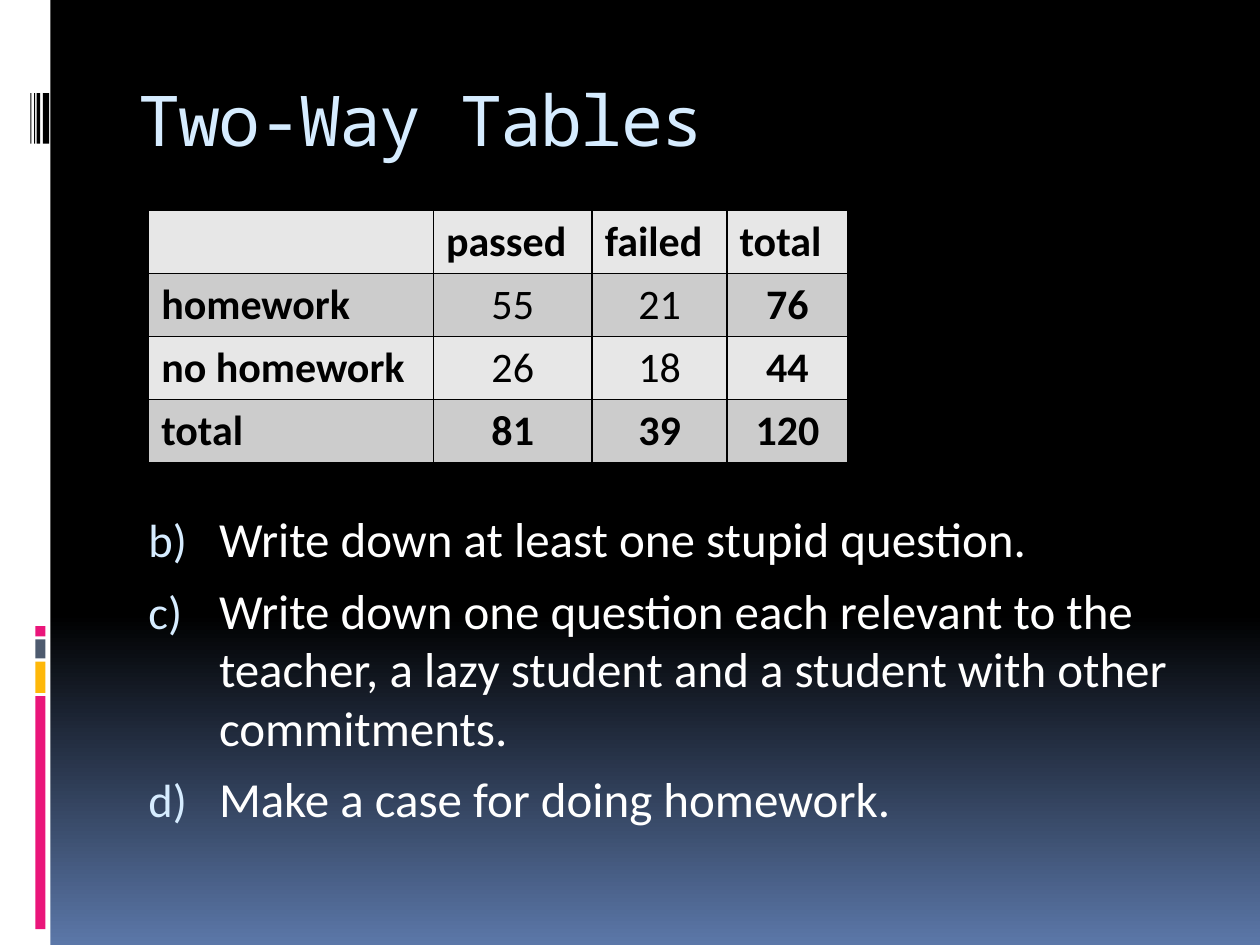
import pptx
import pptx.dml.color
import pptx.enum.shapes
import pptx.enum.text
import pptx.oxml
import pptx.oxml.ns
import pptx.util
import copy

RGBColor = pptx.dml.color.RGBColor
BLACK = RGBColor(0x00, 0x00, 0x00)
WHITE = RGBColor(0xFF, 0xFF, 0xFF)
BLUE = RGBColor(0x5B, 0x77, 0xA8)
PALE_BLUE = RGBColor(0xD6, 0xEC, 0xFF)
PINK = RGBColor(0xEA, 0x15, 0x7A)
YELLOW = RGBColor(0xFE, 0xB8, 0x0A)
SLATE = RGBColor(0x4E, 0x5B, 0x6F)
LIGHT_GREY = RGBColor(0xE7, 0xE7, 0xE7)
GREY = RGBColor(0xCC, 0xCC, 0xCC)

COLUMNS, ROWS = 100, 75
NAMESPACE = pptx.oxml.ns.nsdecls("a")


class SlideBuilder:
    """Draws on one slide; lengths are columns and rows of a 100 by 75 grid."""

    title_font = "Noto Sans Mono"
    body_font = "Calibri"

    def __init__(self, presentation):
        self.column = presentation.slide_width / COLUMNS
        self.row = presentation.slide_height / ROWS
        self.slide = presentation.slides.add_slide(presentation.slide_layouts[6])

    def place(self, left, top, width, height):
        return (round(left * self.column), round(top * self.row),
                round(width * self.column), round(height * self.row))

    def background(self, stops):
        fill = self.slide.background.fill
        fill.gradient()
        fill.gradient_angle = 270
        stop_list = self.slide.element.find(".//" + pptx.oxml.ns.qn("a:gsLst"))
        while len(stop_list) < len(stops):
            stop_list.append(copy.deepcopy(stop_list[0]))
        for stop, (position, color) in zip(fill.gradient_stops, stops):
            stop.position = position
            stop.color.rgb = color

    def bar(self, left, top, width, height, color):
        shape = self.slide.shapes.add_shape(
            pptx.enum.shapes.MSO_SHAPE.RECTANGLE, *self.place(left, top, width, height))
        shape.shadow.inherit = False
        shape.fill.solid()
        shape.fill.fore_color.rgb = color
        shape.line.fill.background()

    def set_font(self, paragraph, name, size, color, bold=False):
        font = paragraph.font
        font.name = name
        font.size = pptx.util.Pt(size)
        font.color.rgb = color
        font.bold = bold

    def text_frame(self, *area):
        frame = self.slide.shapes.add_textbox(*self.place(*area)).text_frame
        frame.word_wrap = True
        return frame

    def title(self, text, *area):
        paragraph = self.text_frame(*area).paragraphs[0]
        paragraph.text = text
        self.set_font(paragraph, self.title_font, 40, PALE_BLUE)
        paragraph.font._element.set("spc", "-100")

    def lettered_list(self, items, start, *area):
        frame = self.text_frame(*area)
        for index, item in enumerate(items):
            paragraph = frame.add_paragraph() if index else frame.paragraphs[0]
            paragraph.text = item
            paragraph.space_before = pptx.util.Pt(7)
            properties = paragraph._p.get_or_add_pPr()
            properties.set("marL", str(pptx.util.Inches(0.64)))
            properties.set("indent", str(pptx.util.Inches(-0.56)))
            for xml in (
                f'<a:buClr {NAMESPACE}><a:srgbClr val="{PALE_BLUE}"/></a:buClr>',
                f'<a:buSzPct {NAMESPACE} val="95000"/>',
                f'<a:buFont {NAMESPACE} typeface="{self.body_font}"/>',
                f'<a:buAutoNum {NAMESPACE} type="alphaLcParenR" startAt="{start}"/>',
            ):
                properties.append(pptx.oxml.parse_xml(xml))
            self.set_font(paragraph, self.body_font, 28, WHITE)

    def table(self, rows, widths, left, top, height):
        """Draws a table whose first row and column are headings and last ones totals."""
        area = self.place(left, top, sum(widths), height)
        table = self.slide.shapes.add_table(len(rows), len(widths), *area).table
        for column, width in zip(table.columns, widths):
            column.width = round(width * self.column)
        last_row, last_column = len(rows) - 1, len(widths) - 1
        for y, values in enumerate(rows):
            for x, value in enumerate(values):
                cell = table.cell(y, x)
                cell.fill.solid()
                cell.fill.fore_color.rgb = GREY if y % 2 else LIGHT_GREY
                self.cell_borders(cell)
                paragraph = cell.text_frame.paragraphs[0]
                paragraph.text = value
                if x and y:
                    paragraph.alignment = pptx.enum.text.PP_ALIGN.CENTER
                bold = x in (0, last_column) or y in (0, last_row)
                self.set_font(paragraph, self.body_font, 24, BLACK, bold)

    def cell_borders(self, cell):
        properties = cell._tc.get_or_add_tcPr()
        for index, side in enumerate("LRTB"):
            properties.insert(index, pptx.oxml.parse_xml(
                f'<a:ln{side} {NAMESPACE} w="12700"><a:solidFill>'
                f'<a:srgbClr val="{BLACK}"/></a:solidFill></a:ln{side}>'))


def main():
    presentation = pptx.Presentation()
    presentation.slide_width = pptx.util.Inches(10)
    presentation.slide_height = pptx.util.Inches(7.5)

    builder = SlideBuilder(presentation)
    builder.background([(0, BLACK), (0.65, BLACK), (1, BLUE)])

    builder.bar(0, 0, 4, ROWS, WHITE)
    top, gap = 49.7, 0.25
    for height, color in ((0.8, PINK), (1.5, SLATE), (2.5, YELLOW), (18.5, PINK)):
        builder.bar(2.8, top, 0.8, height, color)
        top += height + gap
    for left, width in ((2.4, 0.1), (2.7, 0.1), (2.9, 0.3), (3.4, 0.5)):
        builder.bar(left, 7.4, width, 4, BLACK)

    builder.title("Two-Way Tables", 10, 5.6, 85, 10)
    builder.lettered_list([
        "Write down at least one stupid question.",
        "Write down one question each relevant to the teacher, "
        "a lazy student and a student with other commitments.",
        "Make a case for doing homework.",
    ], 2, 10, 39.9, 85, 33.6)
    builder.table([
        ("", "passed", "failed", "total"),
        ("homework", "55", "21", "76"),
        ("no homework", "26", "18", "44"),
        ("total", "81", "39", "120"),
    ], (22.6, 12.6, 10.7, 9.6), 11.8, 16.7, 20)

    presentation.save("out.pptx")


if __name__ == "__main__":
    main()
